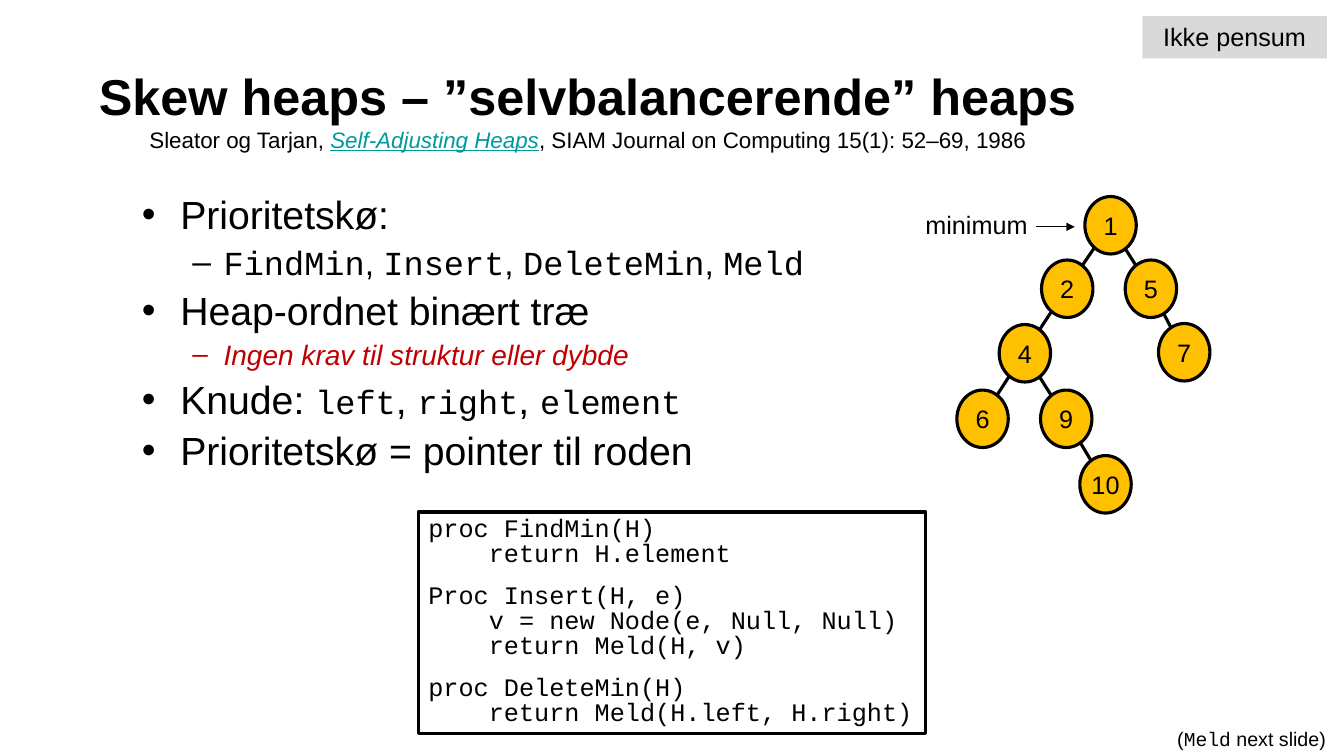
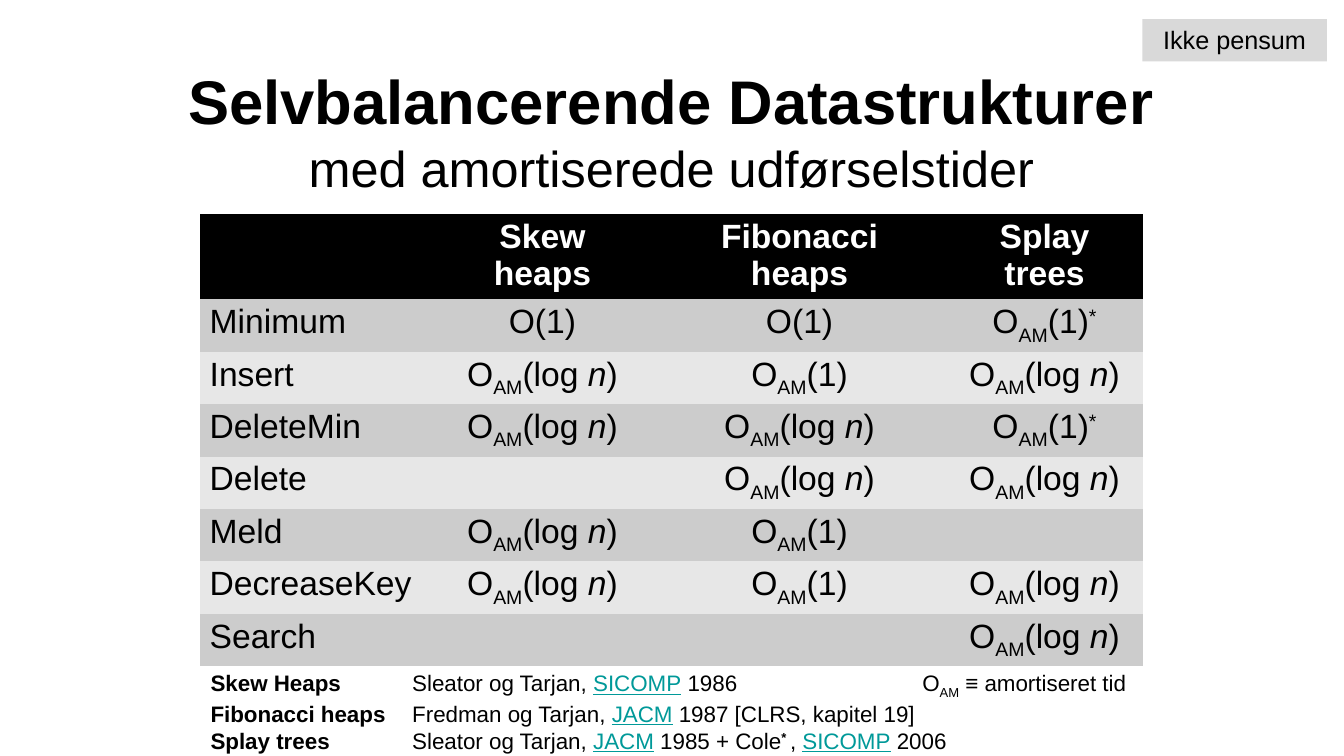
import pptx
import pptx.dml.color
import pptx.enum.shapes
import pptx.enum.text
import pptx.oxml.ns
import pptx.util
from lxml import etree

COLORS = {
    "black": "000000",
    "white": "FFFFFF",
    "tag": "D9D9D9",
    "node": "FFC000",
    "link": "009999",
    "warning": "C00000",
    "dark band": "CCCCCC",
    "light band": "E7E7E7",
}
SANS, MONO = "Arial", "Courier New"
PLAIN_TABLE = "{2D5ABB26-0587-4C30-8999-92F81FD0307C}"
ALIGN = pptx.enum.text.PP_ALIGN
ANCHOR = pptx.enum.text.MSO_ANCHOR
SHAPE = pptx.enum.shapes.MSO_SHAPE

BOLD = {"bold": True}
CODE = {"font": MONO}
LINK = {"color": "link", "underline": True}
SUBSCRIPT = {"baseline": -25000}
SUPERSCRIPT = {"baseline": 30000}


def px(length):
    return pptx.util.Emu(length * 9144)


def rgb(name):
    return pptx.dml.color.RGBColor.from_string(COLORS[name])


def add_child(parent, tag, **attributes):
    return etree.SubElement(parent, pptx.oxml.ns.qn(tag), attributes)


class SlideBuilder:
    def __init__(self, deck):
        self.deck = deck
        self.slide = None

    def new_slide(self, tag_top):
        self.slide = self.deck.slides.add_slide(self.deck.slide_layouts[6])
        self.text(1133, tag_top, 183, 42, [{"spans": ["Ikke pensum"]}],
                  align=ALIGN.CENTER, shape=SHAPE.RECTANGLE, fill="tag")

    def span(self, para, content, size, color, bold):
        text, style = content if isinstance(content, tuple) else (content, {})
        run = para.add_run()
        run.text = text
        font = run.font
        font.name = style.get("font", SANS)
        font.size = pptx.util.Pt(style.get("size", size))
        font.bold = style.get("bold", bold)
        font.italic = style.get("italic", False)
        font.underline = style.get("underline", False)
        font.color.rgb = rgb(style.get("color", color))
        if "baseline" in style:
            run._r.get_or_add_rPr().set("baseline", str(style["baseline"]))

    def fill_text(self, frame, paras, size=18, color="black", bold=False, align=ALIGN.LEFT):
        for index, content in enumerate(paras):
            para = frame.paragraphs[0] if index == 0 else frame.add_paragraph()
            para.alignment = align
            para.space_before = pptx.util.Pt(0)
            para.space_after = pptx.util.Pt(content.get("after", 0))
            if "spacing" in content:
                para.line_spacing = pptx.util.Pt(content["spacing"])
            properties = para._p.get_or_add_pPr()
            if "indent" in content:
                left, first = content["indent"]
                properties.set("marL", str(px(left)))
                properties.set("indent", str(px(first)))
            if "bullet" in content:
                add_child(properties, "a:buFont", typeface=SANS)
                add_child(properties, "a:buChar", char=content["bullet"])
            if "tabs" in content:
                stops = add_child(properties, "a:tabLst")
                for stop in content["tabs"]:
                    add_child(stops, "a:tab", pos=str(px(stop)), algn="l")
            for piece in content["spans"]:
                self.span(para, piece, content.get("size", size), color,
                          content.get("bold", bold))

    def text(self, left, top, width, height, paras, shape=None, fill=None, line=None,
             anchor=ANCHOR.TOP, side_inset=10, **style):
        place = px(left), px(top), px(width), px(height)
        if shape is None:
            box = self.slide.shapes.add_textbox(*place)
        else:
            box = self.slide.shapes.add_shape(shape, *place)
            box.shadow.inherit = False
            if fill:
                box.fill.solid()
                box.fill.fore_color.rgb = rgb(fill)
            else:
                box.fill.background()
            if line:
                box.line.color.rgb = rgb("black")
                box.line.width = pptx.util.Pt(line)
            else:
                box.line.fill.background()
        frame = box.text_frame
        frame.word_wrap = True
        frame.vertical_anchor = anchor
        frame.margin_left = frame.margin_right = px(side_inset)
        self.fill_text(frame, paras, **style)

    def title(self, left, top, height, heading, heading_size, subtitle, subtitle_size):
        self.text(left, top, 1000, height, [
            {"spans": [heading], "size": heading_size, "bold": True},
            {"spans": subtitle, "size": subtitle_size},
        ], anchor=ANCHOR.MIDDLE, align=ALIGN.CENTER)

    def line(self, start, end, width, arrow=False):
        connector = self.slide.shapes.add_connector(
            pptx.enum.shapes.MSO_CONNECTOR.STRAIGHT, *map(px, start + end))
        connector.line.color.rgb = rgb("black")
        connector.line.width = pptx.util.Pt(width)
        if arrow:
            add_child(connector.line._get_or_add_ln(), "a:tailEnd", type="triangle")
        add_child(connector._element.spPr, "a:effectLst")

    def tree(self, nodes):
        for center, parent in nodes.values():
            if parent:
                self.line(center, nodes[parent][0], 2.25)
        width, height = 51, 57
        for label, ((x, y), parent) in nodes.items():
            self.text(x - width // 2, y - height // 2, width, height, [{"spans": [label]}],
                      shape=SHAPE.OVAL, fill="node", line=2.25, anchor=ANCHOR.MIDDLE,
                      side_inset=0, align=ALIGN.CENTER)

    def table(self, left, top, widths, header_height, row_height, rows):
        heights = [header_height] + [row_height] * (len(rows) - 1)
        table = self.slide.shapes.add_table(
            len(rows), len(widths), px(left), px(top), px(sum(widths)), px(sum(heights))).table
        table._tbl.tblPr.find(pptx.oxml.ns.qn("a:tableStyleId")).text = PLAIN_TABLE
        table.first_row = table.horz_banding = False
        for column, width in zip(table.columns, widths):
            column.width = px(width)
        for row_index, (row, height) in enumerate(zip(rows, heights)):
            table.rows[row_index].height = px(height)
            header = row_index == 0
            band = "black" if header else "dark band" if row_index % 2 else "light band"
            for column_index, lines in enumerate(row):
                cell = table.cell(row_index, column_index)
                cell.margin_top, cell.margin_bottom = px(4), px(1)
                cell.fill.solid()
                cell.fill.fore_color.rgb = rgb(band)
                self.fill_text(cell.text_frame, [{"spans": spans} for spans in lines],
                               size=24, color="white" if header else "black", bold=header,
                               align=ALIGN.CENTER if column_index else ALIGN.LEFT)


def bullet(*spans, size=28):
    return {"spans": spans, "size": size, "indent": (38, -38), "bullet": "•", "after": 3}


def dash(*spans, size=24):
    return {"spans": spans, "size": size, "indent": (81, -31), "bullet": "–", "after": 3}


def code_line(text, depth=0, after=0):
    return {"spans": [(text, CODE)], "indent": (60 * depth, 0), "spacing": 18, "after": after}


def reference(name, *spans):
    return {"spans": [(name + "\t", BOLD), *spans], "tabs": (200, 706)}


def skew_heaps(builder):
    builder.new_slide(16)
    builder.title(83, 58, 100, "Skew heaps – ”selvbalancerende” heaps", 36, [
        "Sleator og Tarjan, ",
        ("Self-Adjusting Heaps", {**LINK, "italic": True}),
        ", SIAM Journal on Computing 15(1): 52–69, 1986",
    ], 16)
    small_code = {"font": MONO, "size": 24}
    builder.text(131, 184, 710, 317, [
        bullet("Prioritetskø:"),
        dash(("FindMin", CODE), ", ", ("Insert", CODE), ", ",
             ("DeleteMin", CODE), ", ", ("Meld", CODE)),
        bullet("Heap-ordnet binært træ"),
        dash(("Ingen krav til struktur eller dybde", {"color": "warning", "italic": True}), size=20),
        bullet("Knude: ", ("left", small_code), ", ", ("right", small_code), ", ",
               ("element", small_code)),
        bullet("Prioritetskø = pointer til roden"),
    ])
    builder.tree({
        "1": ((1101, 223), None),
        "2": ((1058, 286), "1"),
        "4": ((1016, 350), "2"),
        "6": ((974, 415), "4"),
        "5": ((1141, 286), "1"),
        "7": ((1174, 349), "5"),
        "9": ((1057, 415), "4"),
        "10": ((1096, 480), "9"),
    })
    builder.line((1028, 225), (1066, 225), 1, arrow=True)
    builder.text(896, 203, 133, 40, [{"spans": ["minimum"]}], align=ALIGN.RIGHT)
    builder.text(415, 508, 503, 220, [
        code_line("proc FindMin(H)"),
        code_line("return H.element", 1, after=12),
        code_line("Proc Insert(H, e)"),
        code_line("v = new Node(e, Null, Null)", 1),
        code_line("return Meld(H, v)", 1, after=12),
        code_line("proc DeleteMin(H)"),
        code_line("return Meld(H.left, H.right)", 1),
    ], shape=SHAPE.RECTANGLE, line=2.25)
    builder.text(1129, 716, 196, 34, [{"spans": ["(", ("Meld", CODE), " next slide)"]}],
                 size=14, align=ALIGN.RIGHT)


def running_times(builder):
    builder.new_slide(19)
    builder.title(166, 67, 125, "Selvbalancerende Datastrukturer", 44,
                  ["med amortiserede udførselstider"], 36)
    amortized = ["O", ("AM", SUBSCRIPT)]
    empty = []
    constant = [["O(1)"]]
    amortized_constant = [[*amortized, "(1)"]]
    starred_constant = [[*amortized, "(1)", ("*", SUPERSCRIPT)]]
    logarithmic = [[*amortized, "(log ", ("n", {"italic": True}), ")"]]
    builder.table(198, 212, (230, 220, 290, 196), 85, 52, [
        (empty, [["Skew"], ["heaps"]], [["Fibonacci"], ["heaps"]], [["Splay trees"]]),
        ([["Minimum"]], constant, constant, starred_constant),
        ([["Insert"]], logarithmic, amortized_constant, logarithmic),
        ([["DeleteMin"]], logarithmic, logarithmic, starred_constant),
        ([["Delete"]], empty, logarithmic, logarithmic),
        ([["Meld"]], logarithmic, amortized_constant, empty),
        ([["DecreaseKey"]], logarithmic, amortized_constant, logarithmic),
        ([["Search"]], empty, empty, logarithmic),
    ])
    builder.text(199, 659, 936, 91, [
        reference("Skew Heaps", "Sleator og Tarjan, ", ("SICOMP", LINK), " 1986\t",
                  *amortized, " ≡ amortiseret tid"),
        reference("Fibonacci heaps", "Fredman og Tarjan, ", ("JACM", LINK),
                  " 1987 [CLRS, kapitel 19]"),
        reference("Splay trees", "Sleator og Tarjan, ", ("JACM", LINK), " 1985 + Cole",
                  ("* ", {**BOLD, **SUPERSCRIPT}), ", ", ("SICOMP", LINK), " 2006"),
    ], size=16)


def main():
    deck = pptx.Presentation()
    deck.slide_width, deck.slide_height = px(1333), px(750)
    builder = SlideBuilder(deck)
    skew_heaps(builder)
    running_times(builder)
    deck.save("out.pptx")


if __name__ == "__main__":
    main()
